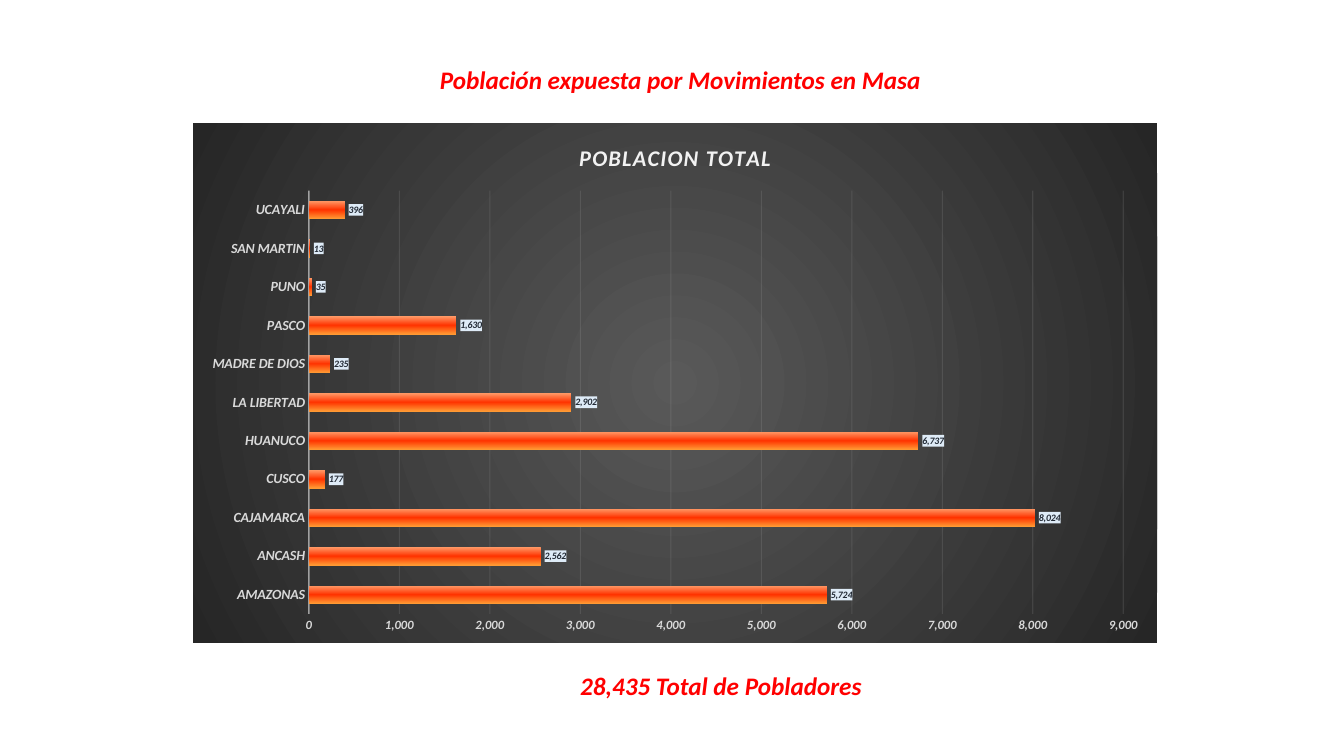
"""Build the slide on population exposed to mass movements, by department."""
from dataclasses import dataclass

from lxml.etree import SubElement
from pptx import Presentation
from pptx.chart.data import CategoryChartData
from pptx.dml.color import RGBColor
from pptx.enum.chart import XL_CHART_TYPE, XL_LABEL_POSITION, XL_TICK_MARK
from pptx.enum.text import MSO_ANCHOR, MSO_AUTO_SIZE, PP_ALIGN
from pptx.oxml import parse_xml
from pptx.oxml.ns import nsdecls, qn
from pptx.util import Pt


@dataclass(frozen=True)
class Theme:
    font: str = "Calibri"
    heading: str = "FF0000"
    chart_title: str = "F2F2F2"
    axis_text: str = "D9D9D9"
    axis_line: str = "F2F2F2"
    label_text: str = "222A35"
    label_fill: str = "DEEBF7"
    background: tuple = ((0, "595959"), (100, "262626"))
    bar: tuple = ((0, "FF9966"), (50, "FF3300"), (100, "FF9933"))
    heading_size: int = 18
    chart_title_size: int = 16
    category_size: int = 10
    value_size: int = 9
    label_size: int = 7


theme = Theme()


def style_font(font, size, color):
    font.name = theme.font
    font.size = Pt(size)
    font.bold = True
    font.italic = True
    font.color.rgb = RGBColor.from_string(color)


def write_text(frame, text, size, color, spacing=0):
    paragraph = frame.paragraphs[0]
    paragraph.alignment = PP_ALIGN.CENTER
    run = paragraph.add_run()
    run.text = text
    style_font(run.font, size, color)
    if spacing:
        run.font._element.set("spc", str(spacing * 100))


population = {
    "AMAZONAS": 5724,
    "ANCASH": 2562,
    "CAJAMARCA": 8024,
    "CUSCO": 177,
    "HUANUCO": 6737,
    "LA LIBERTAD": 2902,
    "MADRE DE DIOS": 235,
    "PASCO": 1630,
    "PUNO": 35,
    "SAN MARTIN": 13,
    "UCAYALI": 396,
}

presentation = Presentation()
presentation.slide_width = Pt(960)
presentation.slide_height = Pt(540)
slide = presentation.slides.add_slide(presentation.slide_layouts[5])

title = slide.shapes.title
title.left, title.top, title.width, title.height = Pt(301), Pt(42), Pt(370), Pt(29)
total = slide.shapes.add_textbox(Pt(390), Pt(475), Pt(250), Pt(29))
for shape, text in (
    (title, "Población expuesta por Movimientos en Masa"),
    (total, "28,435 Total de Pobladores"),
):
    frame = shape.text_frame
    frame.word_wrap = True
    frame.auto_size = MSO_AUTO_SIZE.NONE
    frame.vertical_anchor = MSO_ANCHOR.MIDDLE
    write_text(frame, text, size=theme.heading_size, color=theme.heading)

chart_data = CategoryChartData(number_format="#,##0")
chart_data.categories = list(population)
chart_data.add_series("POBLACION TOTAL", list(population.values()))
chart = slide.shapes.add_chart(
    XL_CHART_TYPE.BAR_CLUSTERED, Pt(138), Pt(88), Pt(688.5), Pt(371), chart_data
).chart
chart.has_legend = False
chart.font.name = theme.font
chart.font.size = Pt(theme.category_size)
chart.has_title = True
write_text(
    chart.chart_title.text_frame,
    "POBLACION TOTAL",
    size=theme.chart_title_size,
    color=theme.chart_title,
    spacing=1,
)
chart.chart_title.include_in_layout = False

category_axis, value_axis = chart.category_axis, chart.value_axis
for axis, size in ((category_axis, theme.category_size), (value_axis, theme.value_size)):
    axis.major_tick_mark = XL_TICK_MARK.NONE
    axis.minor_tick_mark = XL_TICK_MARK.NONE
    style_font(axis.tick_labels.font, size, theme.axis_text)
category_axis.has_major_gridlines = False
value_axis.has_major_gridlines = True
value_axis.minimum_scale = 0
value_axis.maximum_scale = 9000
value_axis.major_unit = 1000
value_axis.tick_labels.number_format = "#,##0"
value_axis.tick_labels.number_format_is_linked = False
value_axis.format.line.fill.background()

for line, width, opacity in (
    (category_axis.format.line, 1, 54),
    (value_axis.major_gridlines.format.line, 0.75, 10),
):
    line.width = Pt(width)
    line.color.rgb = RGBColor.from_string(theme.axis_line)
    color = next(line._get_or_add_ln().iter(qn("a:srgbClr")))
    SubElement(color, qn("a:alpha")).set("val", str(opacity * 1000))

plot = chart.plots[0]
plot.gap_width = 115
plot.overlap = -20
plot.vary_by_categories = False
series = plot.series[0]
series.invert_if_negative = False
labels = series.data_labels
labels.show_value = True
labels.number_format = "#,##0"
labels.number_format_is_linked = False
labels.position = XL_LABEL_POSITION.OUTSIDE_END
style_font(labels.font, theme.label_size, theme.label_text)
labels._element.find(qn("c:numFmt")).addnext(parse_xml(
    f'<c:spPr {nsdecls("c", "a")}><a:solidFill>'
    f'<a:srgbClr val="{theme.label_fill}"/></a:solidFill></c:spPr>'
))

radial = '<a:path path="circle"><a:fillToRect l="50000" t="50000" r="50000" b="50000"/></a:path>'
vertical = '<a:lin ang="5400000" scaled="0"/>'
chart_body = chart._chartSpace.find(qn("c:chart"))
series_name = series._element.find(qn("c:tx"))
for neighbour, stops, direction in (
    (chart_body, theme.background, radial),
    (series_name, theme.bar, vertical),
):
    stop_list = "".join(
        f'<a:gs pos="{position * 1000}"><a:srgbClr val="{color}"/></a:gs>'
        for position, color in stops
    )
    neighbour.addnext(parse_xml(
        f'<c:spPr {nsdecls("c", "a")}><a:gradFill><a:gsLst>{stop_list}</a:gsLst>'
        f'{direction}</a:gradFill><a:ln><a:noFill/></a:ln></c:spPr>'
    ))

plot_area = chart_body.find(qn("c:plotArea"))
for layout in plot_area.findall(qn("c:layout")):
    plot_area.remove(layout)
layout = parse_xml(f'<c:layout {nsdecls("c")}><c:manualLayout/></c:layout>')
for name, value in (
    ("layoutTarget", "inner"), ("xMode", "edge"), ("yMode", "edge"),
    ("x", 0.12), ("y", 0.13), ("w", 0.845), ("h", 0.815),
):
    SubElement(layout[0], qn(f"c:{name}")).set("val", str(value))
plot_area.insert(0, layout)

presentation.save("out.pptx")
